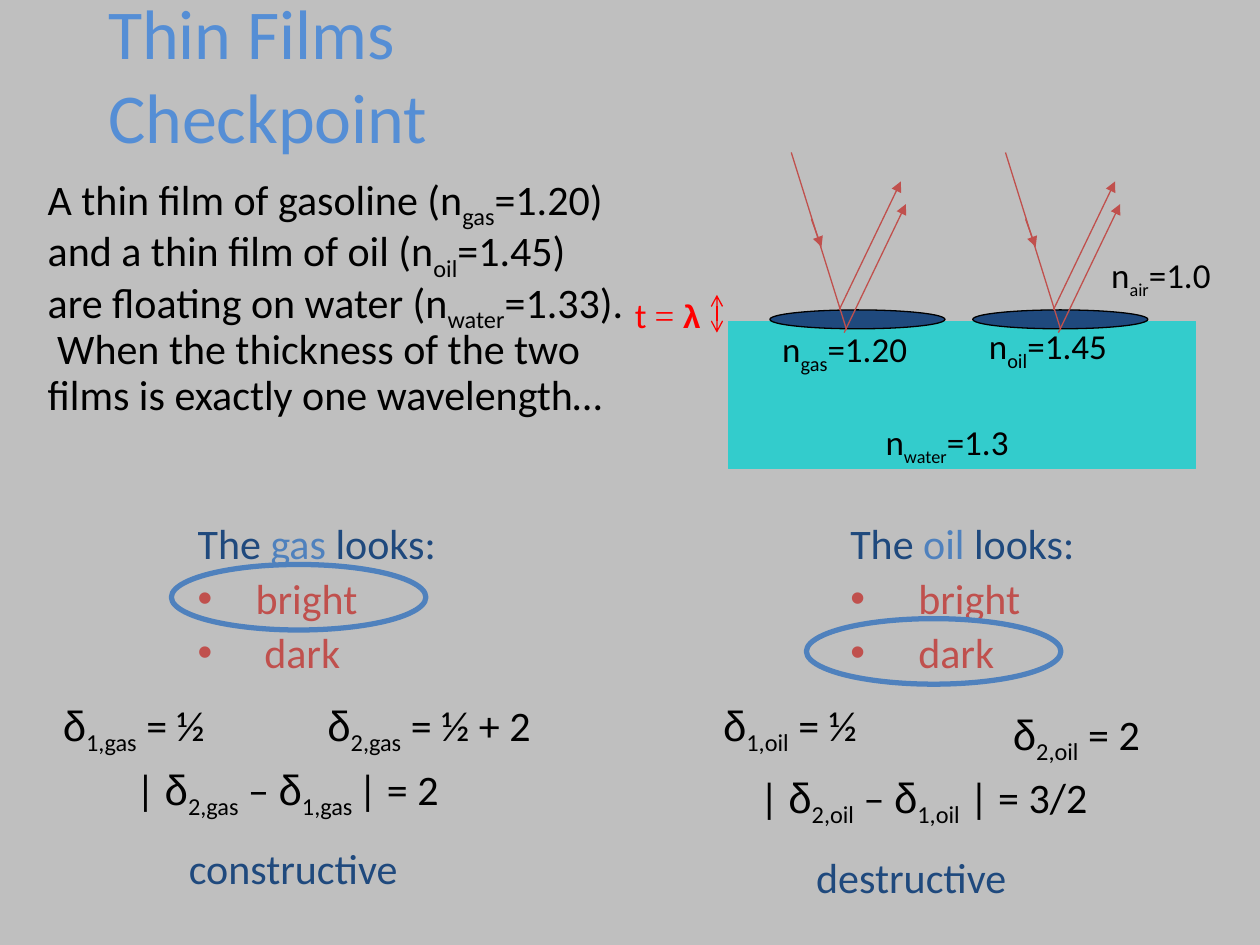
from pptx import Presentation
from pptx.dml.color import RGBColor
from pptx.enum.shapes import MSO_CONNECTOR, MSO_SHAPE
from pptx.enum.text import MSO_ANCHOR
from pptx.oxml.ns import qn
from pptx.util import Inches, Pt
from lxml import etree

LINE = MSO_CONNECTOR.STRAIGHT
RECT, OVAL = MSO_SHAPE.RECTANGLE, MSO_SHAPE.OVAL
MIDDLE = MSO_ANCHOR.MIDDLE
BODY, GREEK, SERIF = "Calibri", "Arial", "Times New Roman"
COLORS = {
    "back": "BFBFBF", "title": "558ED5", "navy": "1F497D", "blue": "4F81BD",
    "red": "C0504D", "mark": "FF0000", "water": "33CCCC", "black": "000000",
}


def color(name):
    return RGBColor.from_string(COLORS[name])


def add_run(para, text, tint, size, font=BODY, low=False):
    run = para.add_run()
    run.text = text
    run.font.size, run.font.name = Pt(size), font
    run.font.color.rgb = color(tint)
    if low:
        run._r.get_or_add_rPr().set("baseline", "-25000")
    return run


def add_math(para, text, tint, size, sub):
    """Write text, with subscripts between tildes and delta in the Greek font."""
    for i, part in enumerate(text.split("~")):
        low = i % 2 == 1
        for piece in part.partition("δ"):
            if piece:
                font = GREEK if piece == "δ" else BODY
                add_run(para, piece, tint, sub if low else size, font, low)


def add_text(shapes, box, paras, size=24, sub=None, wrap=True, gap=0):
    """Add a text box; each paragraph is a list of (text, color) parts."""
    frame = shapes.add_textbox(*map(Inches, box)).text_frame
    frame.word_wrap = wrap
    for i, parts in enumerate(paras):
        para = frame.paragraphs[0] if i == 0 else frame.add_paragraph()
        para.space_before = Pt(gap if i else 0)
        for text, tint in parts:
            add_math(para, text, tint, size, sub or size)
    return frame


def add_bullet(para, indent):
    props = para._p.get_or_add_pPr()
    props.set("marL", str(Inches(indent)))
    props.set("indent", str(-Inches(indent)))
    etree.SubElement(props, qn("a:buFont"), typeface=GREEK)
    etree.SubElement(props, qn("a:buChar"), char="•")


def add_shape(shapes, kind, box, fill, line, width=0.75):
    shape = shapes.add_shape(kind, *map(Inches, box))
    shape.shadow.inherit = False
    if fill:
        shape.fill.solid()
        shape.fill.fore_color.rgb = color(fill)
    else:
        shape.fill.background()
    shape.line.color.rgb = color(line)
    shape.line.width = Pt(width)


def add_line(shapes, start, end, tint, head=None, tail=None):
    """Add a line, with arrowheads at its start (head) and end (tail)."""
    line = shapes.add_connector(LINE, *map(Inches, start + end))
    line.line.color.rgb = color(tint)
    line.line.width = Pt(0.75)
    for tag, kind in (("a:headEnd", head), ("a:tailEnd", tail)):
        if kind:
            etree.SubElement(line.line._get_or_add_ln(), qn(tag), type=kind)
    etree.SubElement(line._element.spPr, qn("a:effectLst"))


def add_title(slide, box):
    lines = [[("Thin Films", "title")], [("Checkpoint", "title")]]
    frame = add_text(slide.shapes, box, lines, 40)
    frame.vertical_anchor = MIDDLE


def add_question(slide, box):
    text = ("A thin film of gasoline (n~gas~=1.20) and a thin film of oil "
            "(n~oil~=1.45) are floating on water (n~water~=1.33).  When the "
            "thickness of the two films is exactly one wavelength…")
    frame = add_text(slide.shapes, box, [[(text, "black")]])
    frame.paragraphs[0].line_spacing = 0.9


def add_rays(shapes, x, y):
    """Draw a ray coming in and its two reflections."""
    add_line(shapes, (x + 0.87, y + 0.23), (x + 0.38, y + 1.25), "red",
             head="triangle")
    add_line(shapes, (x, y), (x + 0.44, y + 1.41), "red")
    add_line(shapes, (x + 0.16, y + 0.53), (x + 0.24, y + 0.75), "red",
             tail="triangle")
    add_line(shapes, (x + 0.91, y + 0.41), (x + 0.42, y + 1.43), "red",
             head="triangle")


def add_films(slide, x, y):
    """Draw the two films on water with their rays and labels."""
    shapes = slide.shapes.add_group_shape().shapes
    add_shape(shapes, RECT, (x + 0.84, y + 1.34, 3.71, 1.17), "water", "water")
    for film, ray in ((1.17, 1.34), (2.78, 3.04)):
        add_shape(shapes, OVAL, (x + film, y + 1.25, 1.39, 0.15),
                  "navy", "black")
        add_rays(shapes, x + ray, y)

    add_line(shapes, (x + 0.75, y + 1.13), (x + 0.75, y + 1.43), "mark",
             head="arrow", tail="arrow")
    depth = add_text(shapes, (x, y + 1.07, 0.91, 0.5), [[("t ", "mark")]], 20)
    add_run(depth.paragraphs[0], "= ", "mark", 20, SERIF)
    add_run(depth.paragraphs[0], "λ", "mark", 18, GREEK).font.bold = True

    labels = (
        ("n~water~=1.3", 1.99, 2.08, 1.45, 18),
        ("n~gas~=1.20", 1.17, 1.34, 1.6, 20),
        ("n~air~=1.0", 3.78, 0.75, 1.28, 18),
        ("n~oil~=1.45", 2.81, 1.32, 1.6, 20),
    )
    for text, left, top, width, sub in labels:
        add_text(shapes, (x + left, y + top, width, 0.43),
                 [[(text, "black")]], 20, sub)


def add_answer(slide, x, y, film, head, indents, ring, sums, result):
    """Add one film's choices, the ringed answer and the reasoning."""
    shapes = slide.shapes
    paras = [
        [("The ", "navy"), (film, "blue"), (" looks:", "navy")],
        [("bright", "red")],
        [("dark", "red")],
    ]
    frame = add_text(shapes, (x + head, y, 3.13, 1.39), paras, gap=2.4)
    for para, indent in zip(frame.paragraphs[1:], indents):
        add_bullet(para, indent)
    for text, left, top, width in sums:
        add_text(shapes, (x + left, y + top, width, 0.51),
                 [[(text, "black")]], wrap=False)
    text, left, top, width = result
    add_text(shapes, (x + left, y + top, width, 0.51),
             [[(text, "navy")]], wrap=False)
    add_shape(shapes, OVAL, (x + ring[0], y + ring[1], 2.02, 0.52),
              None, "blue", 3)


def main():
    deck = Presentation()
    deck.slide_width, deck.slide_height = Inches(10), Inches(7.5)
    slide = deck.slides.add_slide(deck.slide_layouts[6])
    slide.background.fill.solid()
    slide.background.fill.fore_color.rgb = color("back")

    add_title(slide, (0.76, -0.04, 8.5, 1.25))
    add_question(slide, (0.28, 1.33, 4.81, 2.28))
    add_films(slide, 4.94, 1.21)
    add_answer(
        slide, 0.4, 4.06, "gas", 1.07, (0.46, 0.53), (0.96, 0.42),
        (("δ~1,gas~ = ½", 0, 1.44, 1.38),
         ("δ~2,gas~ = ½ + 2", 2.1, 1.44, 1.87),
         ("| δ~2,gas~ – δ~1,gas ~| = 2", 0.58, 1.95, 2.62)),
        ("constructive", 1, 2.58, 1.88))
    add_answer(
        slide, 5.64, 4.06, "oil", 1.01, (0.54, 0.54), (0.76, 0.85),
        (("δ~1,oil~ = ½", 0, 1.44, 1.3),
         ("δ~2,oil~ = 2", 2.3, 1.51, 1.25),
         ("| δ~2,oil~ – δ~1,oil~ | = 3/2", 0.29, 2.01, 2.8)),
        ("destructive", 0.74, 2.65, 1.73))
    deck.save("out.pptx")


if __name__ == "__main__":
    main()
